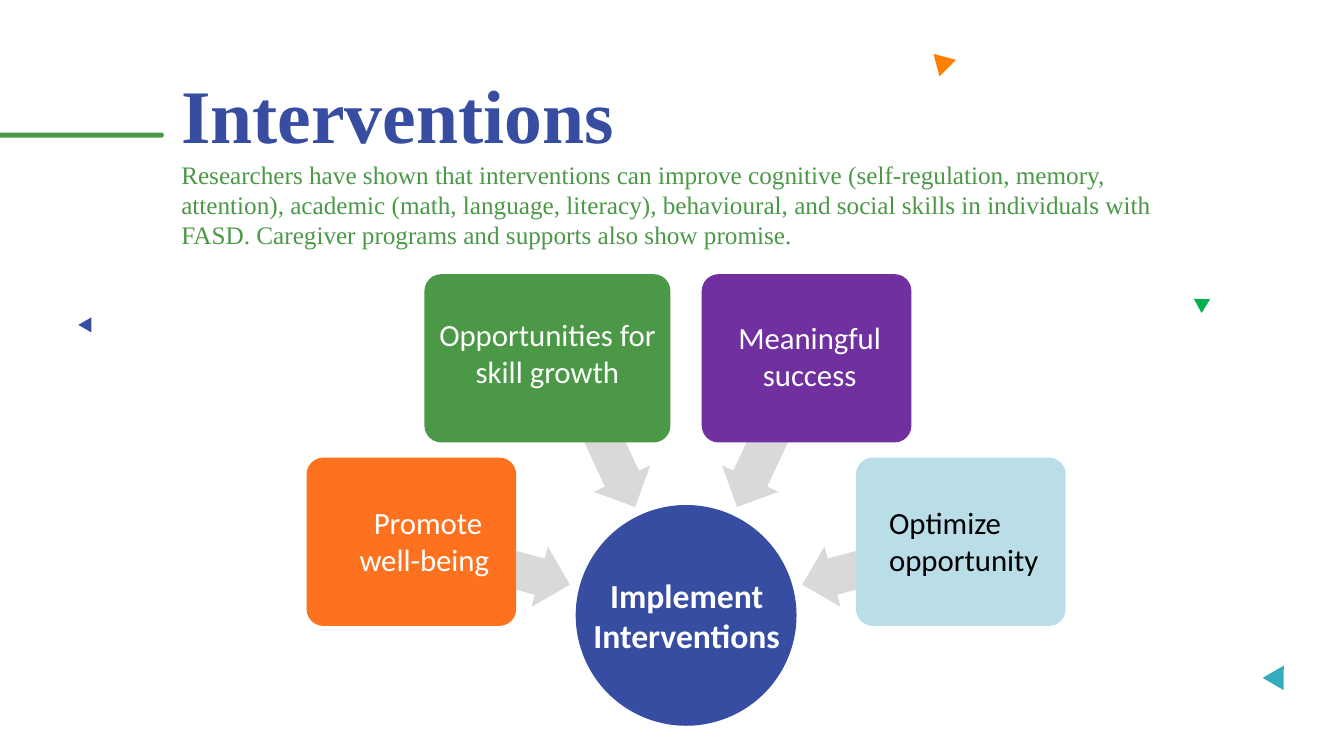
import dataclasses

import pptx
import pptx.dml.color
import pptx.enum.shapes
import pptx.enum.text
import pptx.util

EMU_PER_PX = 9144
SHAPES = pptx.enum.shapes.MSO_SHAPE
ALIGN = pptx.enum.text.PP_ALIGN

BLUE, GREEN, GREY, WHITE = "364DA1", "4B9847", "D9D9D9", "FFFFFF"
SERIF, SANS = "Times New Roman", "Calibri"
CARD_HEIGHT = 167
ARROW_WIDTH, ARROW_HEIGHT = 163, 62
FIRST_ARROW_ANGLE, ARROW_ANGLE_STEP = 195, 50


@dataclasses.dataclass(frozen=True)
class Box:
    left: int
    top: int
    width: int
    height: int

    def emu(self) -> list[int]:
        return [px * EMU_PER_PX for px in dataclasses.astuple(self)]


@dataclasses.dataclass(frozen=True)
class Figure:
    preset: SHAPES
    box: Box
    fill: str
    rotation: float = 0
    adjustments: tuple[float, ...] = ()


@dataclasses.dataclass(frozen=True)
class Label:
    box: Box
    lines: tuple[str, ...]
    size: int
    color: str = WHITE
    align: ALIGN = ALIGN.CENTER
    font: str = SANS
    bold: bool = False


@dataclasses.dataclass(frozen=True)
class Card:
    box: Box
    fill: str
    arrow_left: int
    arrow_top: int
    label: Label


CIRCLE = Figure(SHAPES.OVAL, Box(571, 501, 219, 219), BLUE)

CARDS = [
    Card(Box(304, 454, 208, CARD_HEIGHT), "FE721F", 405, 528,
         Label(Box(283, 495, 212, 84), ("Promote ", "well-being"), 22, align=ALIGN.RIGHT)),
    Card(Box(421, 272, 244, CARD_HEIGHT), GREEN, 514, 398,
         Label(Box(421, 308, 244, 84), ("Opportunities for skill growth",), 22)),
    Card(Box(696, 272, 208, CARD_HEIGHT), "7030A0", 684, 398,
         Label(Box(702, 311, 202, 84), ("Meaningful success",), 22)),
    Card(Box(849, 454, 208, CARD_HEIGHT), "BADEE8", 793, 528,
         Label(Box(872, 495, 201, 84), ("Optimize opportunity",), 22, "000000", ALIGN.LEFT)),
]

DECORATIONS = [
    Figure(SHAPES.ISOSCELES_TRIANGLE, Box(927, 52, 23, 20), "FF8001", 75),
    Figure(SHAPES.ISOSCELES_TRIANGLE, Box(80, 314, 15, 13), BLUE, 30.2),
    Figure(SHAPES.ISOSCELES_TRIANGLE, Box(1182, 293, 16, 14), "03AF50", 301.5),
    Figure(SHAPES.ISOSCELES_TRIANGLE, Box(1256, 659, 24, 21), "34ACBD", 30.2),
    Figure(SHAPES.ROUNDED_RECTANGLE, Box(54, 28, 5, 212), GREEN, 90, (0.5,)),
]

TITLE = Label(Box(170, 62, 469, 101), ("Interventions",), 54, BLUE, ALIGN.LEFT, SERIF, True)
SUMMARY = Label(
    Box(170, 153, 1043, 101),
    ("Researchers have shown that interventions can improve cognitive (self-regulation, memory, "
     "attention), academic (math, language, literacy), behavioural, and social skills in "
     "individuals with FASD. Caregiver programs and supports also show promise.",),
    18, GREEN, ALIGN.LEFT, SERIF)
CENTRE_LABEL = Label(Box(559, 565, 244, 91), ("Implement Interventions",), 24, bold=True)


def color(value: str) -> pptx.dml.color.RGBColor:
    return pptx.dml.color.RGBColor.from_string(value)


def draw_figure(slide: pptx.slide.Slide, figure: Figure) -> None:
    shape = slide.shapes.add_shape(figure.preset, *figure.box.emu())
    shape.shadow.inherit = False
    shape.fill.solid()
    shape.fill.fore_color.rgb = color(figure.fill)
    shape.line.fill.background()
    shape.rotation = figure.rotation
    for index, value in enumerate(figure.adjustments):
        shape.adjustments[index] = value


def draw_label(slide: pptx.slide.Slide, label: Label) -> None:
    text_frame = slide.shapes.add_textbox(*label.box.emu()).text_frame
    text_frame.word_wrap = True
    text_frame.auto_size = pptx.enum.text.MSO_AUTO_SIZE.SHAPE_TO_FIT_TEXT
    text_frame.text = "\n".join(label.lines)
    font_format = {"name": label.font, "size": pptx.util.Pt(label.size), "bold": label.bold}
    for paragraph in text_frame.paragraphs:
        paragraph.alignment = label.align
        font = paragraph.runs[0].font
        for attribute, value in font_format.items():
            setattr(font, attribute, value)
        font.color.rgb = color(label.color)


def draw_card(slide: pptx.slide.Slide, card: Card, angle: int) -> None:
    arrow_box = Box(card.arrow_left, card.arrow_top, ARROW_WIDTH, ARROW_HEIGHT)
    draw_figure(slide, Figure(SHAPES.LEFT_ARROW, arrow_box, GREY, angle, (0.6, 0.5)))
    draw_figure(slide, Figure(SHAPES.ROUNDED_RECTANGLE, card.box, card.fill, 0, (0.1,)))


def main() -> None:
    presentation = pptx.Presentation()
    presentation.slide_width = 1333 * EMU_PER_PX
    presentation.slide_height = 750 * EMU_PER_PX
    slide = presentation.slides.add_slide(presentation.slide_layouts[6])

    draw_figure(slide, CIRCLE)
    for index, card in enumerate(CARDS):
        draw_card(slide, card, FIRST_ARROW_ANGLE + index * ARROW_ANGLE_STEP)
    draw_label(slide, TITLE)
    for figure in DECORATIONS:
        draw_figure(slide, figure)
    for label in [*(card.label for card in CARDS), CENTRE_LABEL, SUMMARY]:
        draw_label(slide, label)

    presentation.save("out.pptx")


if __name__ == "__main__":
    main()
